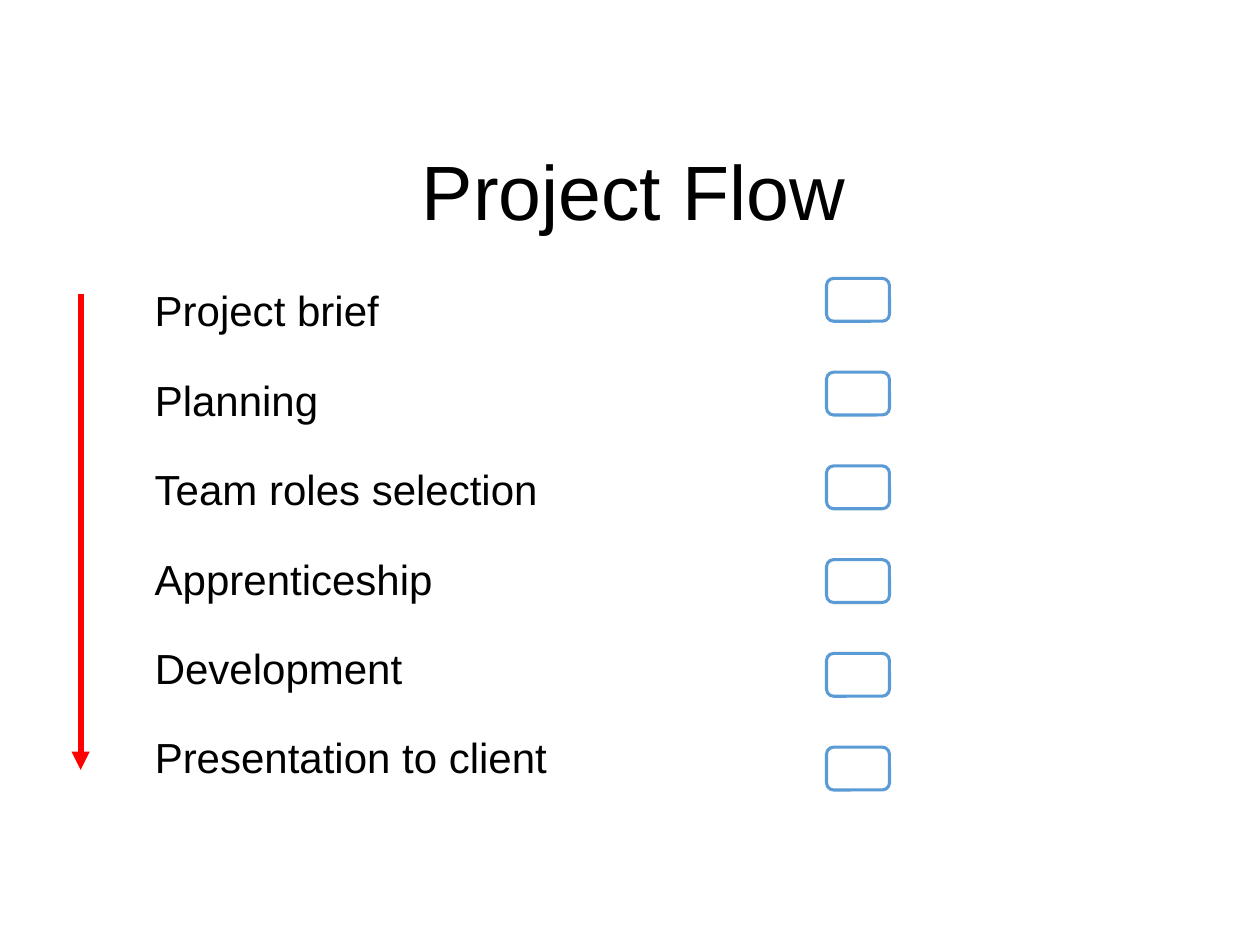
from lxml import etree
from pptx import Presentation
from pptx.dml.color import RGBColor
from pptx.enum.shapes import MSO_CONNECTOR, MSO_SHAPE
from pptx.enum.text import MSO_ANCHOR, MSO_AUTO_SIZE, PP_ALIGN
from pptx.oxml.ns import qn
from pptx.util import Inches, Pt

ROUNDED = MSO_SHAPE.ROUNDED_RECTANGLE
STRAIGHT = MSO_CONNECTOR.STRAIGHT
MIDDLE = MSO_ANCHOR.MIDDLE
CENTER = PP_ALIGN.CENTER
GROW = MSO_AUTO_SIZE.SHAPE_TO_FIT_TEXT
FIXED = MSO_AUTO_SIZE.NONE

COLORS = {"text": "000000", "box": "5B9BD5", "arrow": "FF0000", "background": "FFFFFF"}
STEPS = [
    ("Project brief", 2),
    ("Planning", 1.51),
    ("Team roles selection", 3.27),
    ("Apprenticeship", 2.43),
    ("Development", 2.19),
    ("Presentation to client", 3.35),
]
TOP = 2.21
TEXT_PITCH = 0.71
BOX_PITCH = 0.744


class SlideBuilder:
    font = "Arial"

    def __init__(self, slide):
        self.s = slide
        fill = slide.background.fill
        fill.solid()
        fill.fore_color.rgb = self.color("background")

    def color(self, name):
        return RGBColor.from_string(COLORS[name])

    def style(self, p, size):
        p.font.name = self.font
        p.font.size = Pt(size)
        p.font.color.rgb = self.color("text")

    def outline(self, line, name, width):
        line.color.rgb = self.color(name)
        line.width = Pt(width)

    def title(self, text, x, y, w, h):
        sp = self.s.shapes.title
        sp.left, sp.top, sp.width, sp.height = map(Inches, (x, y, w, h))
        tf = sp.text_frame
        tf.text = text
        tf.auto_size = FIXED
        tf.vertical_anchor = MIDDLE
        p = tf.paragraphs[0]
        p.alignment = CENTER
        p.line_spacing = 0.9
        self.style(p, 44)

    def label(self, text, x, y, w, h):
        tf = self.s.shapes.add_textbox(*map(Inches, (x, y, w, h))).text_frame
        tf.word_wrap = False
        tf.auto_size = GROW
        tf.text = text
        self.style(tf.paragraphs[0], 24)

    def box(self, x, y, w, h):
        sp = self.s.shapes.add_shape(ROUNDED, *map(Inches, (x, y, w, h)))
        sp.shadow.inherit = False
        sp.fill.background()
        self.outline(sp.line, "box", 1.75)

    def arrow(self, x1, y1, x2, y2):
        cxn = self.s.shapes.add_connector(STRAIGHT, *map(Inches, (x1, y1, x2, y2)))
        self.outline(cxn.line, "arrow", 3.5)
        etree.SubElement(cxn.line._get_or_add_ln(), qn("a:tailEnd"), type="triangle")
        etree.SubElement(cxn._element.spPr, qn("a:effectLst"))


def main():
    prs = Presentation()
    prs.slide_width, prs.slide_height = Inches(10), Inches(7.5)
    b = SlideBuilder(prs.slides.add_slide(prs.slide_layouts[5]))
    b.title("Project Flow", 0.32, 1.2, 9.42, 0.7)
    for i, (text, width) in enumerate(STEPS):
        b.label(text, 1.13, TOP + i * TEXT_PITCH, width, 0.5)
    for i in range(len(STEPS)):
        b.box(6.56, TOP + i * BOX_PITCH, 0.5, 0.34)
    b.arrow(0.64, 2.33, 0.64, 6.11)
    prs.save("out.pptx")


if __name__ == "__main__":
    main()
